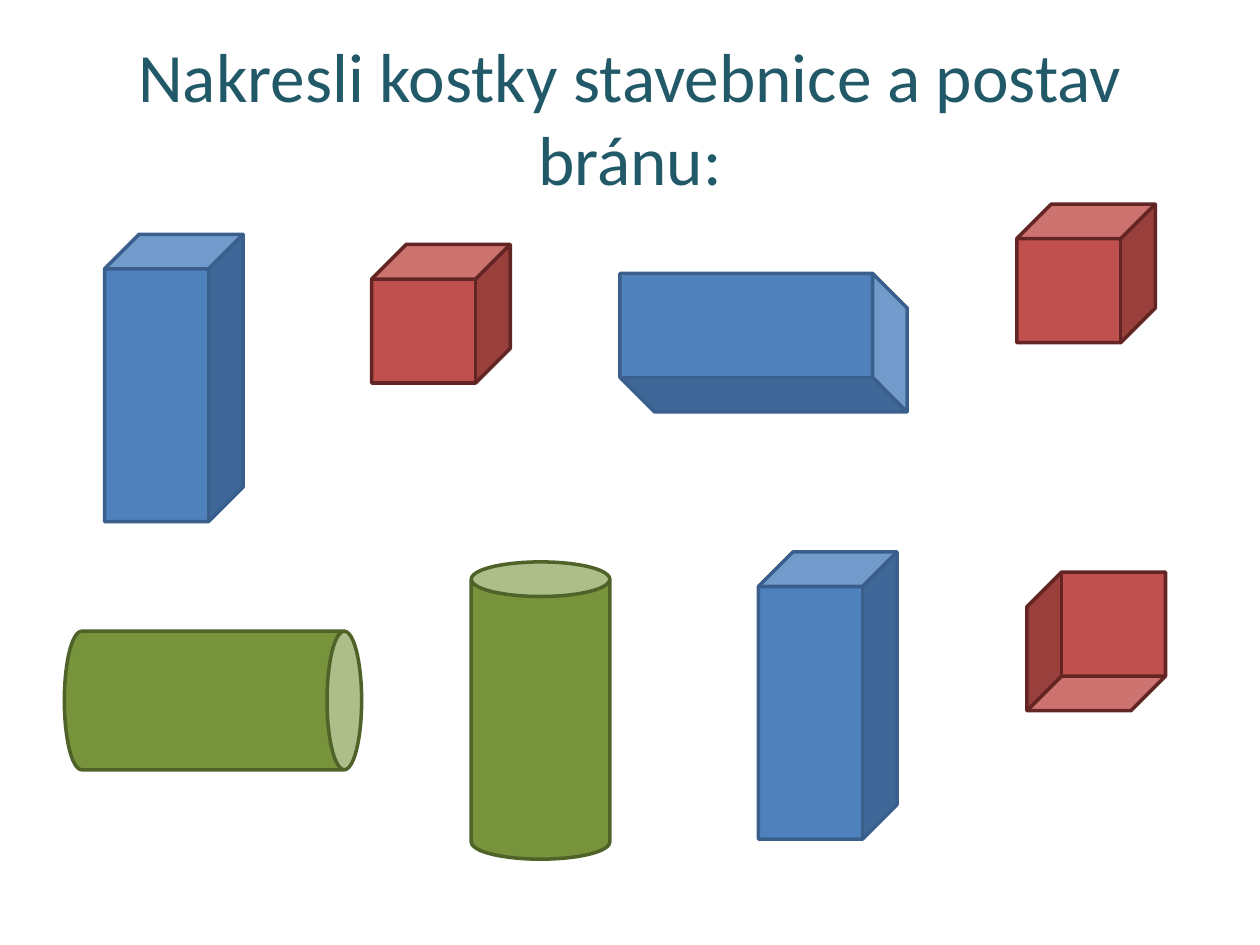
from dataclasses import dataclass

from pptx import Presentation
from pptx.dml.color import RGBColor as Color
from pptx.enum.shapes import MSO_SHAPE as Shape
from pptx.enum.text import MSO_ANCHOR as Anchor, PP_ALIGN as Align
from pptx.util import Inches, Pt


@dataclass(frozen=True)
class Theme:
    font: str = "Calibri"
    title_size: float = 39.6
    title_color: str = "215968"
    outline: float = 2
    red: tuple = ("C0504D", "632523")
    blue: tuple = ("4F81BD", "3A5F8C")
    green: tuple = ("77933C", "4F6228")


class Painter:
    def __init__(self, slide, theme):
        self.slide = slide
        self.theme = theme

    def title(self, text, left, top, width, height):
        box = self.slide.shapes.add_textbox(
            Inches(left), Inches(top), Inches(width), Inches(height))
        frame = box.text_frame
        frame.word_wrap = True
        frame.vertical_anchor = Anchor.MIDDLE
        para = frame.paragraphs[0]
        para.alignment = Align.CENTER
        span = para.add_run()
        span.text = text
        span.font.name = self.theme.font
        span.font.size = Pt(self.theme.title_size)
        span.font.color.rgb = Color.from_string(self.theme.title_color)

    def block(self, kind, colors, left, top, height, rotation=0):
        fill, line = colors
        block = self.slide.shapes.add_shape(
            kind, Inches(left), Inches(top), Inches(BLOCK_WIDTH), Inches(height))
        block.rotation = rotation
        block.shadow.inherit = False
        block.fill.solid()
        block.fill.fore_color.rgb = Color.from_string(fill)
        block.line.color.rgb = Color.from_string(line)
        block.line.width = Pt(self.theme.outline)


BLOCK_WIDTH = 1.1
PRISM_HEIGHT = 2.28
CYLINDER_HEIGHT = 2.36


def main():
    deck = Presentation()
    deck.slide_width, deck.slide_height = Inches(10), Inches(7.5)
    theme = Theme()
    painter = Painter(deck.slides.add_slide(deck.slide_layouts[6]), theme)

    painter.title("Nakresli kostky stavebnice a postav bránu:", 0.5, 0.3, 9, 1.25)

    for left, top, rotation in [(2.95, 1.94, 0), (8.07, 1.62, 0), (8.15, 4.54, 180)]:
        painter.block(Shape.CUBE, theme.red, left, top, BLOCK_WIDTH, rotation)
    for left, top, rotation in [(0.83, 1.86, 0), (6.02, 4.38, 0), (5.51, 1.58, 90)]:
        painter.block(Shape.CUBE, theme.blue, left, top, PRISM_HEIGHT, rotation)
    for left, top, rotation in [(3.74, 4.46, 0), (1.14, 4.38, 90)]:
        painter.block(Shape.CAN, theme.green, left, top, CYLINDER_HEIGHT, rotation)

    deck.save("out.pptx")


if __name__ == "__main__":
    main()
